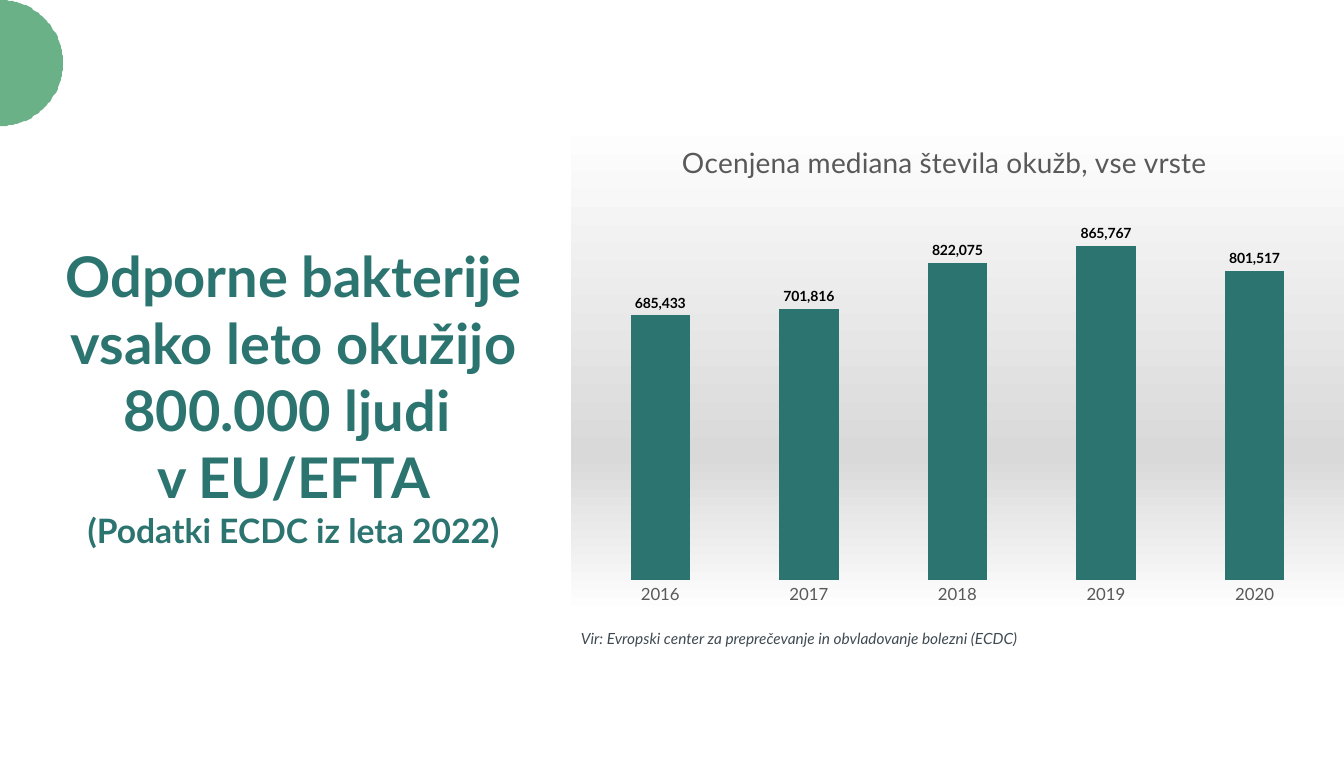
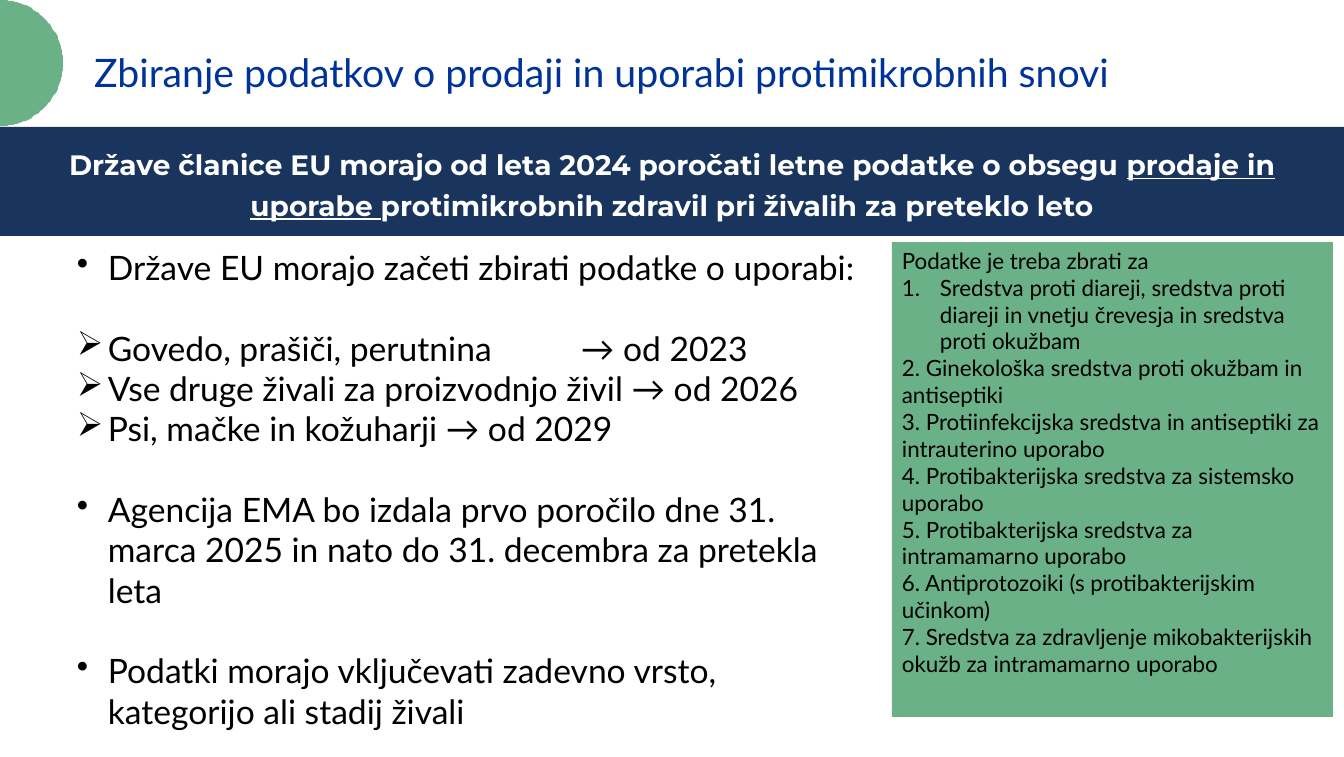
import math

import lxml.etree
import pptx
import pptx.chart.data
import pptx.dml.color
import pptx.enum.chart
import pptx.enum.shapes
import pptx.enum.text
import pptx.oxml
import pptx.oxml.ns
import pptx.util

# Shared look
PX = 914400 / 100.8
SLIDE_W, SLIDE_H = 1344, 757
FONT = "Lato"
COLORS = {"green": "6BB188", "teal": "2C7470", "navy": "19355D", "blue": "003399",
          "white": "FFFFFF", "black": "000000", "gray": "595959", "slate": "3F4A52"}
CORNER_RADIUS = 63
ALIGN = pptx.enum.text.PP_ALIGN
ANCHOR = pptx.enum.text.MSO_ANCHOR

# Content, slide 1
HEADLINE = [("Odporne bakterije vsako leto okužijo 800.000 ljudi \vv EU/EFTA", 40),
            ("(Podatki ECDC iz leta 2022)", 24)]
INFECTIONS_TITLE = "Ocenjena mediana števila okužb, vse vrste"
INFECTIONS = {"2016": 685433, "2017": 701816, "2018": 822075, "2019": 865767, "2020": 801517}
INFECTIONS_MAX = 1000000
INFECTIONS_BOX = (571, 118, 773, 496)
PLOT_BOX = (586, 194, 743, 386)
CHART_TITLE_AT = (677, 137)
BACKDROP = [(0, "FFFFFF"), (68, "D9D9D9"), (100, "FFFFFF")]
CITATION = "Vir: Evropski center za preprečevanje in obvladovanje bolezni (ECDC)"

# Content, slide 2
COLLECTION_TITLE = "Zbiranje podatkov o prodaji in uporabi protimikrobnih snovi"
DUTY = [("Države članice EU morajo od leta 2024 poročati letne podatke o obsegu ", False),
        ("prodaje in uporabe ", True),
        ("protimikrobnih zdravil pri živalih za preteklo leto", False)]
# Bullet, text, starts a new group
DEADLINES = [
    ("•", "Države EU morajo začeti zbirati podatke o uporabi:", False),
    ("➢", "Govedo, prašiči, perutnina\t→ od 2023", True),
    ("➢", "Vse druge živali za proizvodnjo živil → od 2026", False),
    ("➢", "Psi, mačke in kožuharji → od 2029", False),
    ("•", "Agencija EMA bo izdala prvo poročilo dne 31. marca 2025 in nato do "
          "31. decembra za pretekla leta", True),
    ("•", "Podatki morajo vključevati zadevno vrsto, kategorijo ali stadij živali", True),
]
GROUP_GAP = 28.8
DEADLINE_INDENT, DEADLINE_TAB = 31, 504
REQUIRED_HEAD = "Podatke je treba zbrati za"
REQUIRED_FIRST = ("Sredstva proti diareji, sredstva proti diareji in vnetju črevesja "
                  "in sredstva proti okužbam")
REQUIRED_REST = [
    "2. Ginekološka sredstva proti okužbam in antiseptiki",
    "3. Protiinfekcijska sredstva in antiseptiki za intrauterino uporabo",
    "4. Protibakterijska sredstva za sistemsko uporabo",
    "5. Protibakterijska sredstva za intramamarno uporabo",
    "6. Antiprotozoiki (s protibakterijskim učinkom)",
    "7. Sredstva za zdravljenje mikobakterijskih okužb za intramamarno uporabo",
]
REQUIRED_INDENT = 38


def emu(px):
    return pptx.util.Emu(round(px * PX))


def rgb(color):
    return pptx.dml.color.RGBColor.from_string(COLORS[color])


def style(font, size, color, bold=False, italic=False, name=FONT):
    font.name, font.size = name, pptx.util.Pt(size)
    font.bold, font.italic = bold, italic
    font.color.rgb = rgb(color)


def paint(shape, color):
    shape.shadow.inherit = False
    shape.fill.solid()
    shape.fill.fore_color.rgb = rgb(color)
    shape.line.fill.background()


def place(shape, box):
    shape.left, shape.top, shape.width, shape.height = map(emu, box)


def set_frame(shape, anchor=ANCHOR.TOP):
    frame = shape.text_frame
    frame.word_wrap = True
    frame.auto_size = pptx.enum.text.MSO_AUTO_SIZE.NONE
    frame.vertical_anchor = anchor
    return frame


def paragraphs(frame, count):
    return [frame.paragraphs[0]] + [frame.add_paragraph() for _ in range(count - 1)]


def add_bullet(paragraph, indent, tag, tab=None, **attributes):
    properties = paragraph._p.get_or_add_pPr()
    properties.set("marL", str(emu(indent)))
    properties.set("indent", str(-emu(indent)))
    qn = pptx.oxml.ns.qn
    lxml.etree.SubElement(properties, qn(tag), **attributes)
    if tab:
        stops = lxml.etree.SubElement(properties, qn("a:tabLst"))
        lxml.etree.SubElement(stops, qn("a:tab"), pos=str(emu(tab)), algn="l")


def add_slide(deck, title_box):
    """Title-only slide with the green half circle in the top left corner."""
    slide = deck.slides.add_slide(deck.slide_layouts[5])
    angles = [math.radians(degree) for degree in range(-90, 91, 2)]
    arc = [(CORNER_RADIUS * math.cos(a), CORNER_RADIUS * (1 + math.sin(a))) for a in angles]
    outline = slide.shapes.build_freeform(0, 0, scale=PX)
    outline.add_line_segments(arc, close=True)
    paint(outline.convert_to_shape(), "green")
    place(slide.shapes.title, title_box)
    return slide, set_frame(slide.shapes.title)


def set_layout(parent, **values):
    """Manual chart layout, given as fractions of the chart."""
    for old in parent.findall(pptx.oxml.ns.qn("c:layout")):
        parent.remove(old)
    inner = '<c:layoutTarget val="inner"/>' if "w" in values else ""
    parts = "".join(f'<c:{key}Mode val="edge"/>' for key in "xy")
    parts += "".join(f'<c:{key} val="{value:.4f}"/>' for key, value in values.items())
    layout = pptx.oxml.parse_xml(f'<c:layout {pptx.oxml.ns.nsdecls("c")}>'
                                 f'<c:manualLayout>{inner}{parts}</c:manualLayout></c:layout>')
    text = parent.find(pptx.oxml.ns.qn("c:tx"))
    if text is None:
        parent.insert(0, layout)
    else:
        text.addnext(layout)


def add_infections_chart(slide):
    data = pptx.chart.data.CategoryChartData(number_format="#,##0")
    data.categories = list(INFECTIONS)
    data.add_series("Series 1", list(INFECTIONS.values()))
    kinds = pptx.enum.chart
    chart = slide.shapes.add_chart(kinds.XL_CHART_TYPE.COLUMN_CLUSTERED,
                                   *map(emu, INFECTIONS_BOX), data).chart
    style(chart.font, 10, "black")
    chart.has_legend = False
    chart.has_title = True
    heading = chart.chart_title.text_frame.paragraphs[0]
    heading.text = INFECTIONS_TITLE
    style(heading.font, 20, "gray")

    # Axes
    years, counts = chart.category_axis, chart.value_axis
    years.major_tick_mark = kinds.XL_TICK_MARK.NONE
    years.format.line.fill.background()
    style(years.tick_labels.font, 12, "gray")
    counts.minimum_scale, counts.maximum_scale = 0, INFECTIONS_MAX
    counts.has_major_gridlines = False
    counts.visible = False

    # Columns and their values
    plot = chart.plots[0]
    plot.gap_width, plot.overlap, plot.vary_by_categories = 150, -25, False
    columns = plot.series[0].format.fill
    columns.solid()
    columns.fore_color.rgb = rgb("teal")
    plot.has_data_labels = True
    labels = plot.data_labels
    labels.show_value = True
    labels.number_format, labels.number_format_is_linked = "#,##0", False
    labels.position = kinds.XL_LABEL_POSITION.OUTSIDE_END
    style(labels.font, 10, "black", bold=True)

    # Fixed places of the title and the plot
    left, top, width, height = INFECTIONS_BOX
    x, y = CHART_TITLE_AT
    set_layout(chart.chart_title._element, x=(x - left) / width, y=(y - top) / height)
    x, y, w, h = PLOT_BOX
    space = chart._chartSpace
    set_layout(space.chart.plotArea, x=(x - left) / width, y=(y - top) / height,
               w=w / width, h=h / height)

    # Gradient behind the chart
    stops = "".join(f'<a:gs pos="{at * 1000}"><a:srgbClr val="{color}"/></a:gs>'
                    for at, color in BACKDROP)
    space.chart.addnext(pptx.oxml.parse_xml(
        f'<c:spPr {pptx.oxml.ns.nsdecls("c", "a")}><a:gradFill><a:gsLst>{stops}</a:gsLst>'
        '<a:lin ang="5400000" scaled="0"/></a:gradFill><a:ln><a:noFill/></a:ln></c:spPr>'))


def build_infections(deck):
    slide, headline = add_slide(deck, (33, 236, 521, 323))
    for paragraph, (text, size) in zip(paragraphs(headline, len(HEADLINE)), HEADLINE):
        paragraph.text = text
        paragraph.alignment = ALIGN.CENTER
        style(paragraph.font, size, "teal", bold=True)
    add_infections_chart(slide)
    citation = set_frame(slide.shapes.add_textbox(*map(emu, (571, 624, 672, 29)))).paragraphs[0]
    citation.text = CITATION
    style(citation.font, 11, "slate", italic=True)


def build_collection(deck):
    slide, title = add_slide(deck, (84, 34, 1134, 58))
    heading = title.paragraphs[0]
    heading.text = COLLECTION_TITLE
    heading.alignment, heading.line_spacing = ALIGN.LEFT, 1.2
    style(heading.font, 28, "blue")
    rectangle = pptx.enum.shapes.MSO_SHAPE.RECTANGLE

    # Band with the reporting duty
    band = slide.shapes.add_shape(rectangle, *map(emu, (0, 127, SLIDE_W, 109)))
    paint(band, "navy")
    duty = set_frame(band, ANCHOR.MIDDLE).paragraphs[0]
    duty.alignment, duty.line_spacing = ALIGN.CENTER, 1.2
    style(duty.font, 20, "white", bold=True, name="Montserrat")
    for text, underlined in DUTY:
        run = duty.add_run()
        run.text = text
        run.font.underline = underlined

    # Deadlines
    deadlines = set_frame(slide.shapes.add_textbox(*map(emu, (67, 242, 811, 500))))
    for paragraph, (mark, text, new_group) in zip(paragraphs(deadlines, len(DEADLINES)),
                                                  DEADLINES):
        paragraph.text = text
        add_bullet(paragraph, DEADLINE_INDENT, "a:buChar", char=mark,
                   tab=DEADLINE_TAB if "\t" in text else None)
        if new_group:
            paragraph.space_before = pptx.util.Pt(GROUP_GAP)
        style(paragraph.font, 24, "black")

    # Required data
    panel = slide.shapes.add_shape(rectangle, *map(emu, (892, 242, 441, 475)))
    paint(panel, "green")
    required = [REQUIRED_HEAD, REQUIRED_FIRST] + REQUIRED_REST
    for paragraph, text in zip(paragraphs(set_frame(panel), len(required)), required):
        paragraph.text = text
        paragraph.alignment = ALIGN.LEFT
        if text == REQUIRED_FIRST:
            add_bullet(paragraph, REQUIRED_INDENT, "a:buAutoNum", type="arabicPeriod")
        style(paragraph.font, 16, "black")


def main():
    deck = pptx.Presentation()
    deck.slide_width, deck.slide_height = emu(SLIDE_W), emu(SLIDE_H)
    build_infections(deck)
    build_collection(deck)
    deck.save("out.pptx")


if __name__ == "__main__":
    main()
